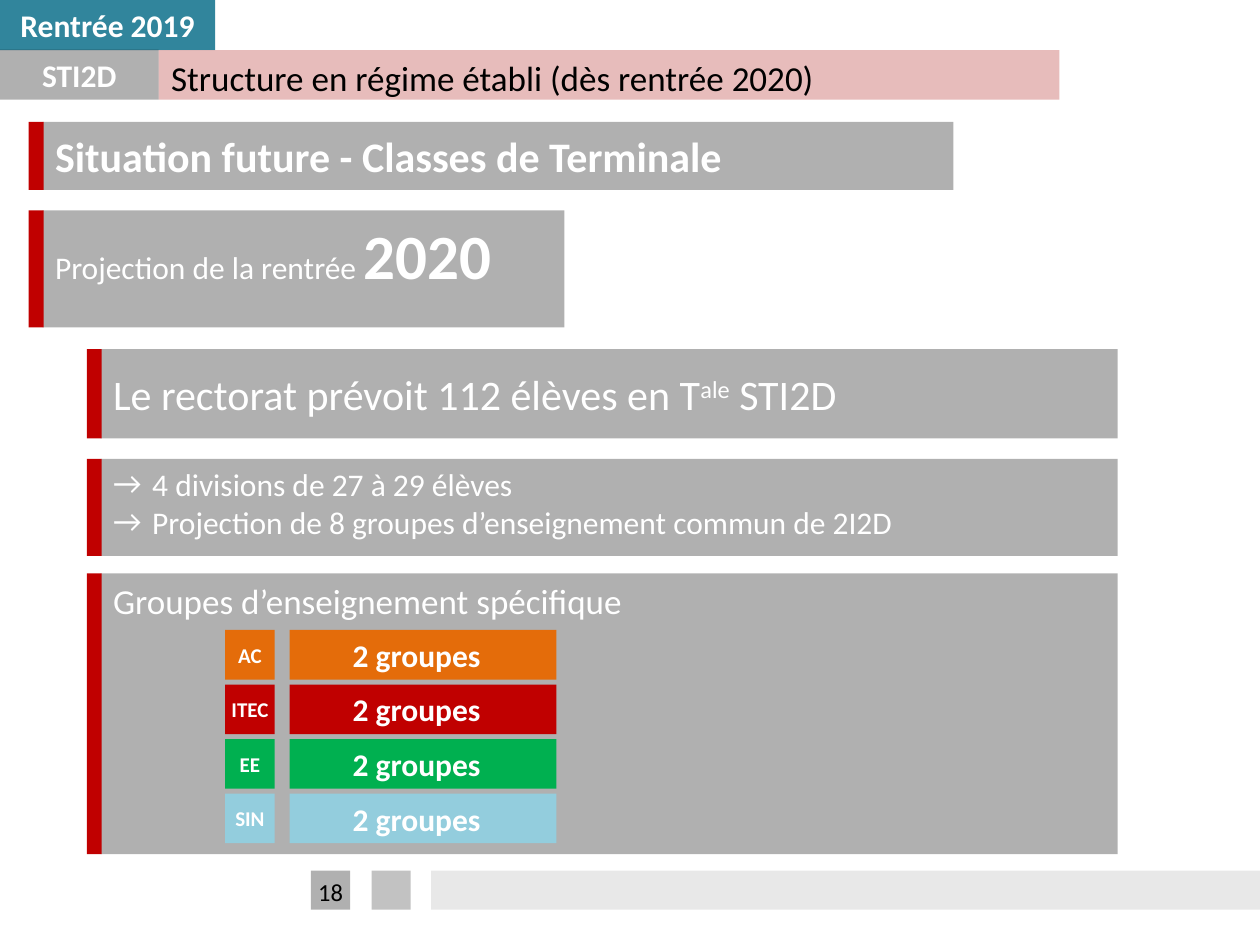
from lxml.etree import SubElement
from pptx import Presentation
from pptx.dml.color import RGBColor
from pptx.enum.shapes import MSO_SHAPE
from pptx.enum.text import MSO_ANCHOR, PP_ALIGN
from pptx.oxml.ns import qn
from pptx.util import Cm, Pt

THEME = {
    "font": "Calibri",
    "white": "FFFFFF", "black": "000000", "red": "C00000", "teal": "31859C",
    "pink": "D99694", "orange": "E46C0A", "green": "00B050", "sky": "93CDDD",
    "label": 12, "number": 14, "body": 18, "title": 20, "heading": 24, "year": 36,
}
PANEL_OPACITY = 31
BAR_WIDTH, BAR_OFFSET = 0.3, 0.28
BULLET_INDENT = 0.79

# Content: a paragraph is a list of (text, size, bold, superscript) runs
TITLE = "Structure en régime établi (dès rentrée 2020)"
PAGE_NUMBER = "18"
PANELS = [  # box in cm, anchor, bullet, paragraphs
    ((0.86, 2.46, 18.36, 1.37), MSO_ANCHOR.MIDDLE, None,
     [[("Situation future - Classes de Terminale", "heading", True, False)]]),
    ((0.86, 4.24, 10.52, 2.36), MSO_ANCHOR.TOP, None,
     [[("Projection de la rentrée ", "body", False, False),
       ("2020", "year", True, False)]]),
    ((2.03, 7.04, 20.5, 1.8), MSO_ANCHOR.MIDDLE, None,
     [[("Le rectorat prévoit 112 élèves en T", "heading", False, False),
       ("ale", "heading", False, True),
       (" STI2D", "heading", False, False)]]),
    ((2.03, 9.25, 20.5, 1.96), MSO_ANCHOR.TOP, "→",
     [[("4 divisions de 27 à 29 élèves", "body", False, False)],
      [("Projection de 8 groupes d’enseignement commun de 2I2D",
        "body", False, False)]]),
    ((2.03, 11.56, 20.5, 5.66), MSO_ANCHOR.TOP, None,
     [[("Groupes d’enseignement spécifique", "title", False, False)]]),
]
SPECIALITIES = [
    ("AC", "2 groupes", "orange"),
    ("ITEC", "2 groupes", "red"),
    ("EE", "2 groupes", "green"),
    ("SIN", "2 groupes", "sky"),
]
FOOTER_BLOCKS = [(6.27, 0.79, 31), (7.49, 0.79, 24), (8.69, 16.71, 9)]


def add_rectangle(shapes, box, color, opacity=100):
    shape = shapes.add_shape(MSO_SHAPE.RECTANGLE, *map(Cm, box))
    shape.shadow.inherit = False
    shape.line.fill.background()
    shape.fill.solid()
    shape.fill.fore_color.rgb = RGBColor.from_string(THEME[color])
    if opacity < 100:
        color_element = shape.fill._xPr.find(qn("a:solidFill"))[0]
        SubElement(color_element, qn("a:alpha"), val=str(opacity * 1000))
    return shape


def add_bullet(paragraph, character):
    properties = paragraph._p.get_or_add_pPr()
    properties.set("marL", str(Cm(BULLET_INDENT)))
    properties.set("indent", str(-Cm(BULLET_INDENT)))
    SubElement(properties, qn("a:buFont"), typeface=THEME["font"])
    SubElement(properties, qn("a:buChar"), char=character)


def write(shape, paragraphs, color="white", align=PP_ALIGN.LEFT,
          anchor=MSO_ANCHOR.MIDDLE, bullet=None, inset=None):
    frame = shape.text_frame
    frame.word_wrap = True
    frame.vertical_anchor = anchor
    if inset is not None:
        frame.margin_left = Cm(inset)
        frame.margin_right = frame.margin_top = frame.margin_bottom = 0
    for index, runs in enumerate(paragraphs):
        paragraph = frame.add_paragraph() if index else frame.paragraphs[0]
        paragraph.alignment = align
        if bullet:
            add_bullet(paragraph, bullet)
        for text, size, bold, superscript in runs:
            run = paragraph.add_run()
            run.text = text
            run.font.name = THEME["font"]
            run.font.size = Pt(THEME[size])
            run.font.bold = bold
            run.font.color.rgb = RGBColor.from_string(THEME[color])
            if superscript:
                run.font._element.set("baseline", "30000")


def add_header(slide):
    tab = add_rectangle(slide.shapes, (0, 0, 4.34, 1.01), "teal")
    write(tab, [[("Rentrée 2019", "body", True, False)]], align=PP_ALIGN.CENTER)
    add_rectangle(slide.shapes, (3.2, 1.01, 18.16, 1), "pink", 63)
    course = add_rectangle(slide.shapes, (0, 1, 3.2, 1.01), "black", PANEL_OPACITY)
    write(course, [[("STI2D", "body", True, False)]], align=PP_ALIGN.CENTER)
    title = slide.shapes.add_textbox(*map(Cm, (3.2, 1, 18.16, 1.11)))
    write(title, [[(TITLE, "title", False, False)]], "black")


def add_footer(slide):
    for left, width, opacity in FOOTER_BLOCKS:
        add_rectangle(slide.shapes, (left, 17.55, width, 0.79), "black", opacity)
    number = slide.shapes.add_textbox(*map(Cm, (5.94, 17.55, 1.45, 1.02)))
    write(number, [[(PAGE_NUMBER, "number", False, False)]], "black",
          PP_ALIGN.CENTER, MSO_ANCHOR.TOP)


def add_panel(slide, box, anchor, bullet, paragraphs):
    group = slide.shapes.add_group_shape()
    left, top, _, height = box
    panel = add_rectangle(group.shapes, box, "black", PANEL_OPACITY)
    write(panel, paragraphs, anchor=anchor, bullet=bullet)
    add_rectangle(group.shapes, (left - BAR_OFFSET, top, BAR_WIDTH, height), "red")
    return group


def add_specialities(group):
    first_top, pitch, height = 12.7, 1.1, 1
    for index, (name, count, color) in enumerate(SPECIALITIES):
        top = first_top + index * pitch
        label = add_rectangle(group.shapes, (4.54, top, 1, height), color)
        write(label, [[(name, "label", True, False)]],
              align=PP_ALIGN.CENTER, inset=0)
        strip = add_rectangle(group.shapes, (5.84, top, 5.38, height), color)
        write(strip, [[(count, "body", True, False)]], inset=1.27)


def main():
    presentation = Presentation()
    presentation.slide_width, presentation.slide_height = Cm(25.4), Cm(19.05)
    slide = presentation.slides.add_slide(presentation.slide_layouts[6])
    add_header(slide)
    add_footer(slide)
    groups = [add_panel(slide, *panel) for panel in PANELS]
    add_specialities(groups[-1])
    presentation.save("out.pptx")


if __name__ == "__main__":
    main()
